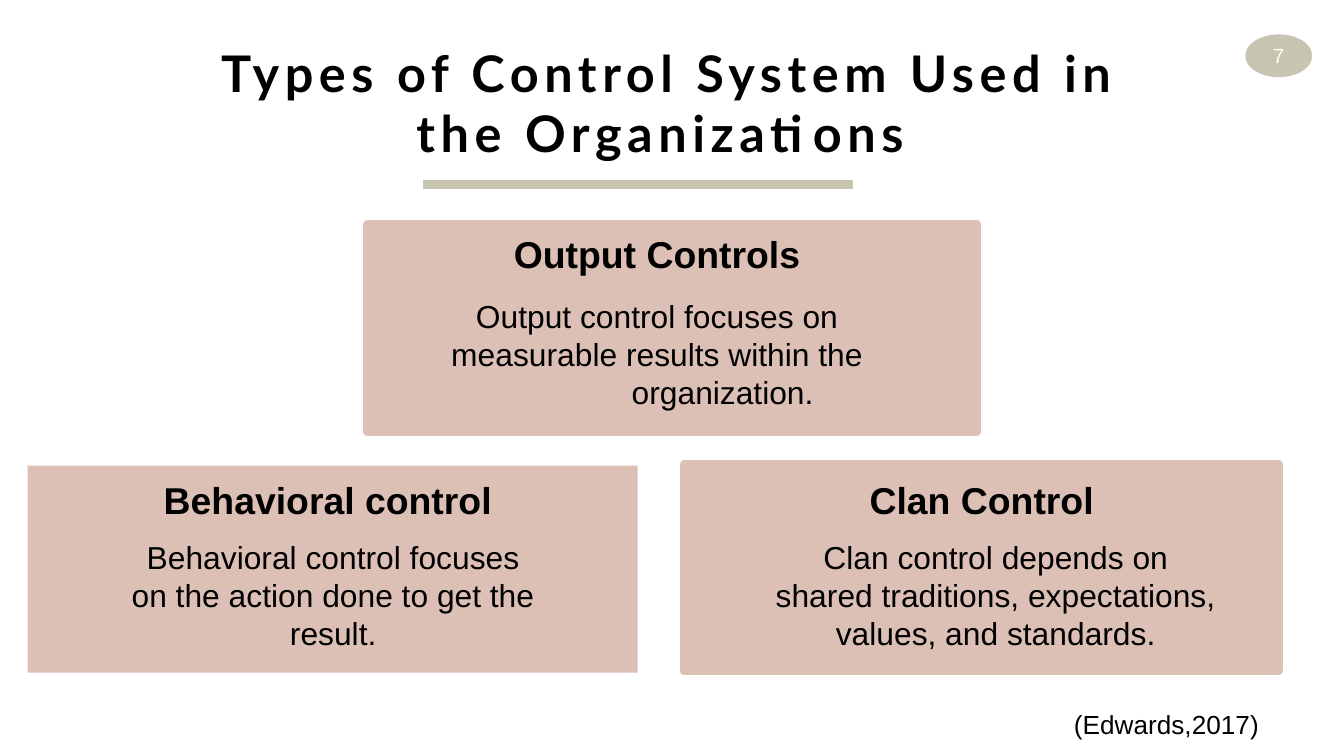
from dataclasses import dataclass

from lxml import etree
from pptx import Presentation
from pptx.dml.color import RGBColor
from pptx.enum.shapes import MSO_CONNECTOR, MSO_SHAPE
from pptx.enum.text import MSO_ANCHOR, PP_ALIGN
from pptx.oxml.ns import qn
from pptx.util import Inches, Length, Pt

RECT, OVAL = MSO_SHAPE.RECTANGLE, MSO_SHAPE.OVAL
STRAIGHT = MSO_CONNECTOR.STRAIGHT
LEFT, CENTER = PP_ALIGN.LEFT, PP_ALIGN.CENTER
TOP, MIDDLE = MSO_ANCHOR.TOP, MSO_ANCHOR.MIDDLE

PINK = RGBColor(0xDC, 0xC0, 0xB6)
SAND = RGBColor(0xC8, 0xC4, 0xB2)
BLACK = RGBColor(0, 0, 0)
WHITE = RGBColor(0xFF, 0xFF, 0xFF)

COLS, ROWS = 100, 56.25  # square cells, a tenth of an inch; 16:9
CARD_H, HEAD_H, BODY_H = 15.4, 4.4, 9.6
BORDER = 4.5


@dataclass(frozen=True)
class Box:
    """Place on the grid, in columns and rows."""
    col: float
    row: float
    cols: float
    rows: float

    def emu(self) -> list[Length]:
        return [grid(v) for v in (self.col, self.row, self.cols, self.rows)]


@dataclass(frozen=True)
class Card:
    panel: Box
    border: float
    heading: str
    heading_box: Box
    body: tuple[str, ...]
    body_box: Box
    last_indent: float = 0


CARDS = (
    Card(Box(27.32, 16.72, 45.4, CARD_H), BORDER,
         "Output Controls", Box(31.5, 16.7, 34.8, HEAD_H),
         ("Output control focuses on measurable results within the", "organization."),
         Box(32.4, 21.6, 33, BODY_H), last_indent=9.75),
    Card(Box(50.9, 34.55, 44.25, CARD_H), BORDER,
         "Clan Control", Box(56.5, 35, 33.1, HEAD_H),
         ("Clan control depends on shared traditions, expectations, values, and standards.",),
         Box(56.45, 39.53, 35.3, BODY_H)),
    Card(Box(2.05, 34.65, 45.4, CARD_H), 0,
         "Behavioral control", Box(9.5, 35, 29.8, HEAD_H),
         ("Behavioral control focuses on the action done to get the result.",),
         Box(8.6, 39.53, 32.4, BODY_H)),
)


def grid(cells: float) -> Length:
    return Inches(cells / 10)


def write(s, *lines: str, size: float, font: str = "Arial", color: RGBColor = BLACK,
          bold: bool = False, align=CENTER, anchor=TOP, spacing: float = 0,
          last_indent: float = 0) -> None:
    """Fill a shape with one paragraph per line; last_indent is in columns."""
    tf = s.text_frame
    tf.word_wrap = True
    tf.vertical_anchor = anchor
    for i, line in enumerate(lines):
        p = tf.add_paragraph() if i else tf.paragraphs[0]
        p.alignment = align
        r = p.add_run()
        r.text = line
        r.font.name, r.font.size, r.font.bold = font, Pt(size), bold
        r.font.color.rgb = color
        if spacing:
            r.font._element.set("spc", str(round(spacing * 100)))
    if last_indent:
        p._p.get_or_add_pPr().set("marL", str(grid(last_indent)))


def add_text(slide, box: Box, *lines: str, **fmt) -> None:
    write(slide.shapes.add_textbox(*box.emu()), *lines, **fmt)


def add_panel(slide, kind, box: Box, color: RGBColor, border: float):
    s = slide.shapes.add_shape(kind, *box.emu())
    s.shadow.inherit = False
    s.fill.solid()
    s.fill.fore_color.rgb = color
    if border:
        s.line.color.rgb = color
        s.line.width = Pt(border)
    else:
        s.line.fill.background()
    return s


def add_rule(slide, start: float, end: float, row: float) -> None:
    s = slide.shapes.add_connector(STRAIGHT, grid(start), grid(row), grid(end), grid(row))
    s.line.color.rgb = SAND
    s.line.width = Pt(BORDER)
    etree.SubElement(s._element.spPr, qn("a:effectLst"))


def add_card(slide, card: Card) -> None:
    add_panel(slide, RECT, card.panel, PINK, card.border)
    add_text(slide, card.heading_box, card.heading, size=20, bold=True)
    add_text(slide, card.body_box, *card.body, size=17, last_indent=card.last_indent)


def main() -> None:
    prs = Presentation()
    prs.slide_width, prs.slide_height = grid(COLS), grid(ROWS)
    slide = prs.slides.add_slide(prs.slide_layouts[6])

    add_text(slide, Box(12.8, 2.63, 74, 10.1),
             "Types of Control System Used in the Organizations ",
             size=27, font="Lato", bold=True, spacing=3)
    add_rule(slide, 31.5, 63.5, 13.73)
    for card in CARDS:
        add_card(slide, card)
    add_text(slide, Box(78.93, 52.24, 17.4, 3.4), "(Edwards,2017)", size=14, align=LEFT)

    badge = add_panel(slide, OVAL, Box(92.8, 2.7, 4.7, 2.9), SAND, 2)
    tf = badge.text_frame
    tf.margin_left = tf.margin_right = tf.margin_top = tf.margin_bottom = 0
    write(badge, "7", size=11, color=WHITE, anchor=MIDDLE)

    prs.save("out.pptx")


if __name__ == "__main__":
    main()
